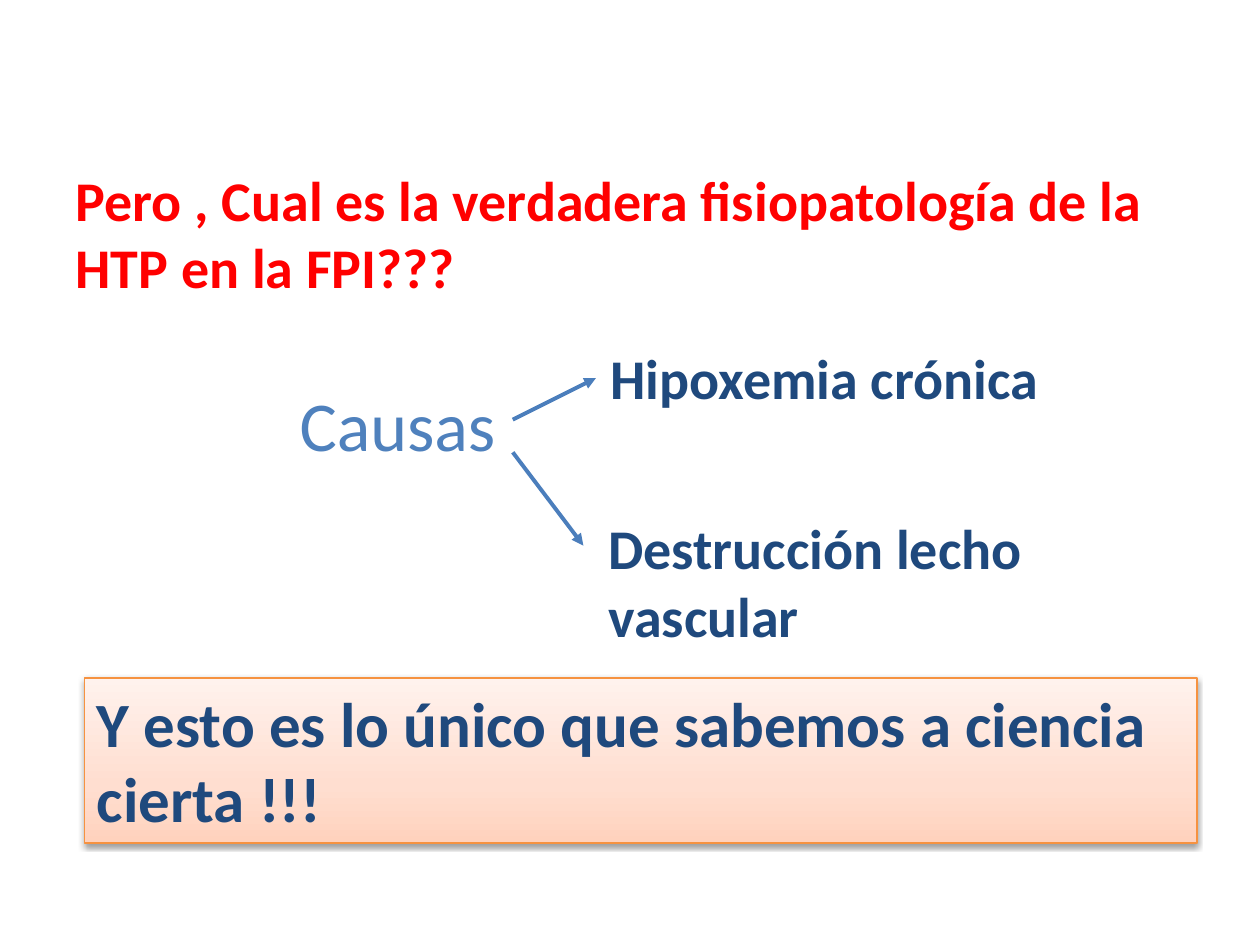
from copy import deepcopy

from lxml import etree
from pptx import Presentation
from pptx.dml.color import RGBColor
from pptx.enum.shapes import MSO_CONNECTOR, MSO_SHAPE
from pptx.enum.text import MSO_ANCHOR, MSO_AUTO_SIZE, PP_ALIGN
from pptx.oxml.ns import qn
from pptx.util import Inches, Pt

STRAIGHT, RECTANGLE = MSO_CONNECTOR.STRAIGHT, MSO_SHAPE.RECTANGLE
TOP, NO_FIT = MSO_ANCHOR.TOP, MSO_AUTO_SIZE.NONE
LEFT, CENTER = PP_ALIGN.LEFT, PP_ALIGN.CENTER
TITLE_ONLY = 5
COLUMNS, ROWS = 100, 75

COLORS = {
    "question": "FF0000",
    "topic": "4F81BD",
    "answer": "1F497D",
    "arrow": "4B7EBC",
    "border": "F69240",
    "shadow": "000000",
}
BANNER_STOPS = [(0, "FFD2BD"), (0.35, "FFDED0"), (1, "FFF2ED")]


class SlideBuilder:
    """Holds the style and the current slide; lengths are grid columns and rows."""

    font = "Calibri"

    def __init__(self, presentation):
        self.column = presentation.slide_width / COLUMNS
        self.row = presentation.slide_height / ROWS
        self.slide = presentation.slides.add_slide(presentation.slide_layouts[TITLE_ONLY])

    def place(self, left, top, width, height):
        return (round(left * self.column), round(top * self.row),
                round(width * self.column), round(height * self.row))

    def set_text(self, shape, text, size, color, bold=True, align=LEFT, wrap=True):
        frame = shape.text_frame
        frame_format = {"word_wrap": wrap, "auto_size": NO_FIT, "vertical_anchor": TOP}
        for name, value in frame_format.items():
            setattr(frame, name, value)
        paragraph = frame.paragraphs[0]
        paragraph.alignment = align
        run = paragraph.add_run()
        run.text = text
        for name, value in {"name": self.font, "size": Pt(size), "bold": bold}.items():
            setattr(run.font, name, value)
        run.font.color.rgb = RGBColor.from_string(COLORS[color])

    def title(self, text, box, **text_format):
        shape = self.slide.shapes.title
        shape.left, shape.top, shape.width, shape.height = self.place(*box)
        self.set_text(shape, text, **text_format)

    def label(self, text, box, **text_format):
        shape = self.slide.shapes.add_textbox(*self.place(*box))
        self.set_text(shape, text, **text_format)

    def arrow(self, start, end):
        begin_x, begin_y, end_x, end_y = self.place(*start, *end)
        connector = self.slide.shapes.add_connector(STRAIGHT, begin_x, begin_y, end_x, end_y)
        connector.line.width = Pt(2.25)
        connector.line.color.rgb = RGBColor.from_string(COLORS["arrow"])
        properties = connector.element.spPr
        etree.SubElement(properties.find(qn("a:ln")), qn("a:tailEnd"), type="triangle")
        etree.SubElement(properties, qn("a:effectLst"))

    def banner(self, text, box, **text_format):
        shape = self.slide.shapes.add_shape(RECTANGLE, *self.place(*box))
        shape.line.width = Pt(0.75)
        shape.line.color.rgb = RGBColor.from_string(COLORS["border"])

        # Gradient running from the bottom edge to the top
        fill = shape.fill
        fill.gradient()
        fill.gradient_angle = 90
        stop_list = shape.element.spPr.find(qn("a:gradFill")).find(qn("a:gsLst"))
        stop_list.append(deepcopy(stop_list[-1]))
        for stop, (position, color) in zip(fill.gradient_stops, BANNER_STOPS):
            stop.position = position
            stop.color.rgb = RGBColor.from_string(color)

        # Soft shadow below the box
        shape.shadow.inherit = False
        effects = shape.element.spPr.find(qn("a:effectLst"))
        shadow = etree.SubElement(effects, qn("a:outerShdw"), blurRad=str(Pt(3.1)),
                                  dist=str(Pt(1.6)), dir="5400000", rotWithShape="0")
        color = etree.SubElement(shadow, qn("a:srgbClr"), val=COLORS["shadow"])
        etree.SubElement(color, qn("a:alpha"), val="38000")
        self.set_text(shape, text, **text_format)


def main():
    presentation = Presentation()
    presentation.slide_width, presentation.slide_height = Inches(10), Inches(7.5)
    builder = SlideBuilder(presentation)
    answer_style = {"size": 32, "color": "answer"}

    # Question
    builder.title("Pero , Cual es la verdadera fisiopatología de la HTP en la FPI???",
                  (5, 12.6, 90, 11.8), size=32, color="question")

    # Causes and the arrows to them
    builder.label("Causas", (22.8, 29.8, 17.9, 7.8), size=40, color="topic", bold=False)
    builder.arrow((40.7, 33.3), (47.3, 30))
    builder.arrow((40.7, 35.9), (46.3, 43.3))
    builder.label("Destrucción lecho vascular", (47.3, 40.3, 45.8, 11.8), **answer_style)
    builder.label("Hipoxemia crónica", (47.3, 26.8, 36.3, 6.4),
                  align=CENTER, wrap=False, **answer_style)

    # Conclusion
    builder.banner("Y esto es lo único que sabemos a ciencia cierta !!!",
                   (6.7, 53.8, 88.3, 13.1), size=36, color="answer")

    presentation.save("out.pptx")


if __name__ == "__main__":
    main()
